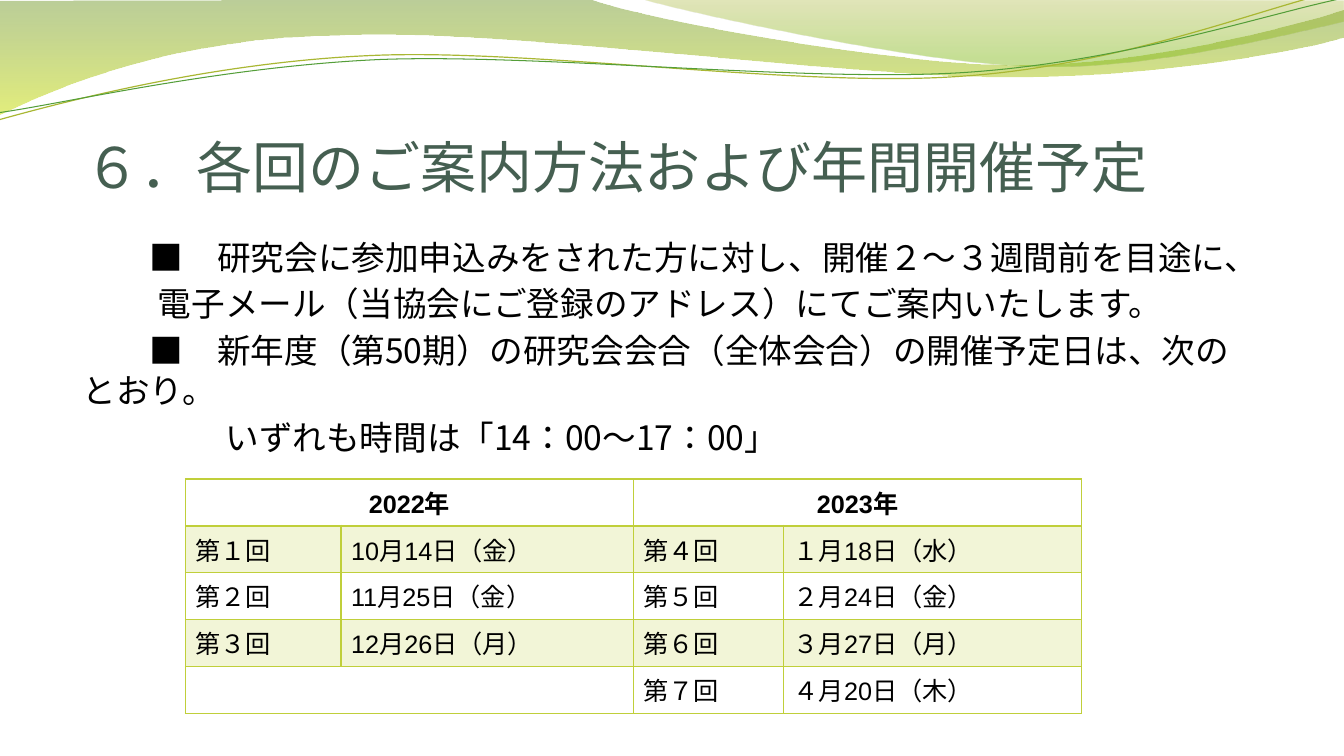
from pptx import Presentation
from pptx.dml.color import RGBColor
from pptx.enum.lang import MSO_LANGUAGE_ID
from pptx.enum.text import MSO_ANCHOR, MSO_AUTO_SIZE, PP_ALIGN
from pptx.oxml import parse_xml
from pptx.oxml.ns import qn
from pptx.util import Cm, Pt
from lxml.etree import SubElement

BLACK = RGBColor(0, 0, 0)
PINE = RGBColor(0x45, 0x5F, 0x51)
LIME = RGBColor(0xC0, 0xCF, 0x3A)
MOSS = RGBColor(0x69, 0x92, 0x1C)
LEMON = RGBColor(0xCC, 0xE1, 0x0F)
OLIVE = RGBColor(0x9B, 0xAA, 0x1A)
LEAF = RGBColor(0x81, 0xBA, 0x16)
STRAW = RGBColor(0xA9, 0xB7, 0x33)
GRASS = RGBColor(0x54, 0x9E, 0x39)
NOTO = "Noto Sans CJK JP"
MAIN = "http://schemas.openxmlformats.org/drawingml/2006/main"

BAND = [(0, 0), (14.91, -0.03),
        (16.1, 0.43, 22.45, 1.6, 25.68, 1.6), (28.88, 1.6, 32.44, 0.66, 33.86, 0.23),
        (33.88, 0.91), (33.3, 1.12, 29.44, 1.93, 25.25, 1.9),
        (21.06, 1.9, 12.93, 0.71, 8.71, 0.86), (4.37, 0.91, 1.55, 2.11, -0.05, 2.87)]
CREST = [(16.2, -0.03), (17.25, 0.28, 23.09, 1.57, 26.03, 1.65),
         (28.96, 1.75, 32.56, 0.81, 33.86, 0.53), (33.86, 0)]
UPPER = [(-0.03, 3.02), (1.6, 2.57, 5.33, 1.57, 9.37, 1.4),
         (13.39, 1.22, 20.04, 2.21, 24.1, 1.93), (28.19, 1.68, 31.78, 0.2, 33.78, -0.25)]
LOWER = [(-0.03, 2.84), (1.57, 2.62, 5.54, 1.68, 9.58, 1.5),
         (13.64, 1.35, 20.22, 2.08, 24.26, 1.83), (28.3, 1.57, 31.88, 0.36, 33.86, -0.05)]

LINES = [
    (1.7, "■　研究会に参加申込みをされた方に対し、開催２～３週間前を目途に、"),
    (1.9, "電子メール（当協会にご登録のアドレス）にてご案内いたします。"),
    (1.7, "■　新年度（第50期）の研究会会合（全体会合）の開催予定日は、次のとおり。"),
    (3.6, "いずれも時間は「14：00～17：00」"),
]
DATES = [
    ("2022年", "", "2023年", ""),
    ("第１回", "10月14日（金）", "第４回", "１月18日（水）"),
    ("第２回", "11月25日（金）", "第５回", "２月24日（金）"),
    ("第３回", "12月26日（月）", "第６回", "３月27日（月）"),
    ("", "", "第７回", "４月20日（木）"),
]


def put(item, **form):
    for name, value in form.items():
        setattr(item, name, value)


def fade(color, share):
    alpha = SubElement(color, qn("a:alpha"))
    alpha.set("val", str(share * 1000))


class Deck:
    """Holds the style and the current slide."""

    def __init__(self):
        self.show = Presentation()
        put(self.show, slide_width=Cm(33.86), slide_height=Cm(19.05))
        self.slide = self.show.slides.add_slide(self.show.slide_layouts[5])
        self.shapes = self.slide.shapes
        self.base = {"size": Pt(24), "name": NOTO, "bold": False,
                     "language_id": MSO_LANGUAGE_ID.JAPANESE}

    def font(self, run, ink=BLACK, **form):
        put(run.font, **{**self.base, **form})
        run.font.color.rgb = ink
        east = SubElement(run._r.get_or_add_rPr(), qn("a:ea"))
        east.set("typeface", NOTO)

    def curve(self, path, closed):
        spots = [(Cm(part[k]), Cm(part[k + 1])) for part in path for k in range(0, len(part), 2)]
        pen = self.shapes.build_freeform(*spots[0])
        pen.add_line_segments(spots[1:], close=closed)
        shape = pen.convert_to_shape()
        shape.shadow.inherit = False
        edges = iter(list(shape._element.iter(qn("a:lnTo"))))
        for part in path[1:]:
            first = next(edges)
            if len(part) == 6:
                first.tag = qn("a:cubicBezTo")
                for edge in (next(edges), next(edges)):
                    first.append(edge[0])
                    edge.getparent().remove(edge)
        return shape

    def wave(self, path, *stops):
        shape = self.curve(path, True)
        shape.top += Cm(0.03)
        shape.line.fill.background()
        shape.fill.gradient()
        shape.fill.gradient_angle = 270
        for stop, (place, ink, share) in zip(shape.fill.gradient_stops, stops):
            stop.position = place
            stop.color.rgb = ink
            fade(stop._gs[0], share)

    def thread(self, path, ink, width):
        shape = self.curve(path, False)
        shape.fill.background()
        shape.line.color.rgb = ink
        shape.line.width = Pt(width)

    def title(self, text):
        shape = self.shapes.title
        self.shapes._spTree.append(shape._element)
        put(shape, left=Cm(2.13), top=Cm(2.37), width=Cm(30.48), height=Cm(2.64))
        frame = shape.text_frame
        put(frame, margin_left=0, margin_right=0, margin_top=Cm(0.13), margin_bottom=0,
            vertical_anchor=MSO_ANCHOR.BOTTOM, auto_size=MSO_AUTO_SIZE.NONE, word_wrap=True)
        para = frame.paragraphs[0]
        put(para, alignment=PP_ALIGN.LEFT, line_spacing=0.8)
        run = para.add_run()
        run.text = text
        self.font(run, size=Pt(40), ink=PINE)

    def body(self, lines):
        box = self.shapes.add_textbox(Cm(1.83), Cm(5.84), Cm(29.72), Cm(11.79))
        frame = box.text_frame
        frame.word_wrap = True
        for rank, (indent, text) in enumerate(lines):
            para = frame.add_paragraph() if rank else frame.paragraphs[0]
            put(para, line_spacing=Pt(28.6), space_before=Pt(4.8 if rank else 0))
            props = para._p.get_or_add_pPr()
            props.set("marL", "0")
            props.set("indent", str(Cm(indent)))
            run = para.add_run()
            run.text = text
            self.font(run)

    def edge(self, cell, row):
        props = cell._tc.get_or_add_tcPr()
        for rank, side in enumerate(("lnL", "lnR", "lnT", "lnB")):
            width = Pt(2 if (row, side) in ((0, "lnB"), (1, "lnT")) else 1)
            props.insert(rank, parse_xml(
                f'<a:{side} xmlns:a="{MAIN}" w="{width}"><a:solidFill>'
                f'<a:srgbClr val="{LIME}"/></a:solidFill></a:{side}>'))

    def table(self, rows, widths):
        frame = self.shapes.add_table(len(rows), len(widths), Cm(4.67), Cm(12.07),
                                      Cm(sum(widths)), Cm(1.18 * len(rows)))
        grid = frame.table
        put(grid, first_row=False, horz_banding=False)
        for col, width in zip(grid.columns, widths):
            col.width = Cm(width)
        for r, texts in enumerate(rows):
            grid.rows[r].height = Cm(1.18)
            for c, text in enumerate(texts):
                cell = grid.cell(r, c)
                if r % 2:
                    cell.fill.solid()
                    cell.fill.fore_color.rgb = LIME
                    fade(cell._tc.tcPr.find(qn("a:solidFill"))[0], 20)
                else:
                    cell.fill.background()
                self.edge(cell, r)
                if text:
                    para = cell.text_frame.paragraphs[0]
                    para.alignment = PP_ALIGN.LEFT if r else PP_ALIGN.CENTER
                    run = para.add_run()
                    run.text = text
                    face = "Vollkorn" if r and c == 0 else "Arial"
                    self.font(run, size=Pt(18), name=face, bold=r == 0)
        for r, c in ((0, 0), (0, 2), (len(rows) - 1, 0)):
            grid.cell(r, c).merge(grid.cell(r, c + 1))


def main():
    deck = Deck()
    deck.wave(BAND, (0, MOSS, 45), (1, LEMON, 55))
    deck.wave(CREST, (0, OLIVE, 30), (0.8, LEAF, 45))
    deck.thread(UPPER, STRAW, 0.85)
    deck.thread(LOWER, GRASS, 0.75)
    deck.title("６．各回のご案内方法および年間開催予定")
    deck.body(LINES)
    deck.table(DATES, (3.92, 7.37, 3.78, 7.51))
    deck.show.save("out.pptx")


if __name__ == "__main__":
    main()
